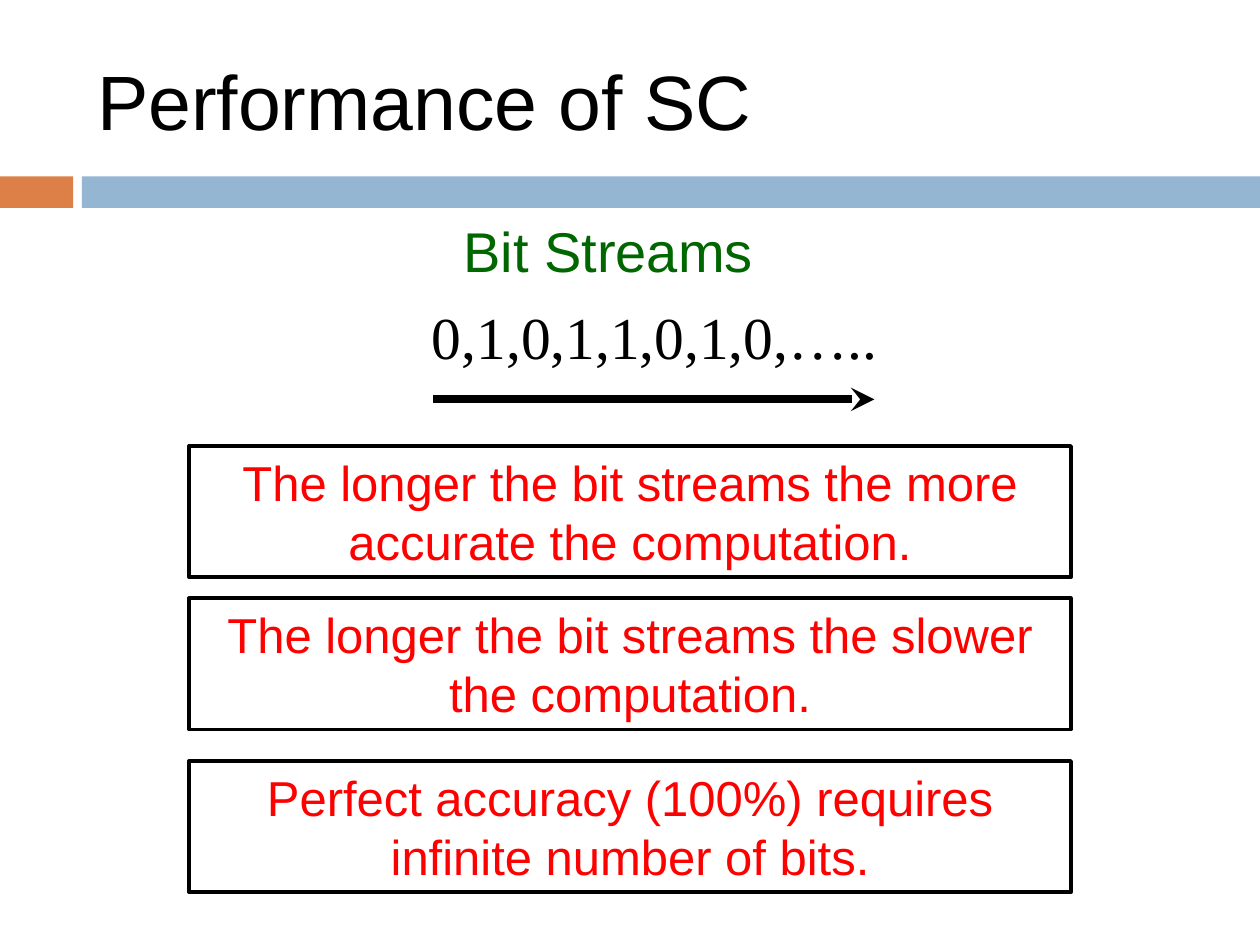
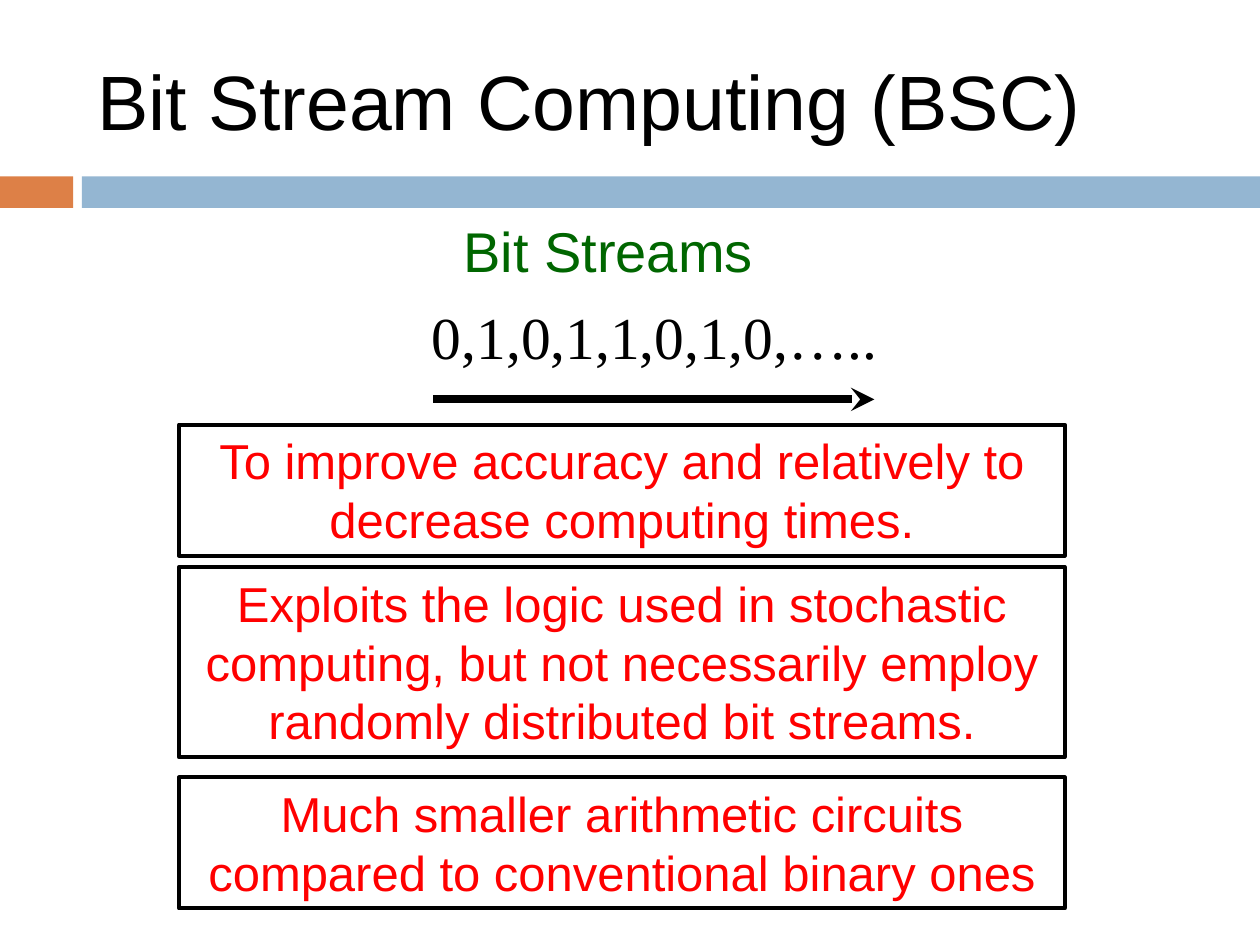
import dataclasses

import lxml.etree
import pptx
import pptx.dml.color
import pptx.enum.shapes
import pptx.enum.text
import pptx.oxml.ns
import pptx.util

Inches = pptx.util.Inches
Align = pptx.enum.text.PP_ALIGN
Anchor = pptx.enum.text.MSO_ANCHOR
AutoSize = pptx.enum.text.MSO_AUTO_SIZE


@dataclasses.dataclass(frozen=True)
class Theme:
    """Colours, fonts and sizes shared by the slides."""

    black: str = "000000"
    white: str = "FFFFFF"
    orange: str = "DD8047"
    blue: str = "94B6D2"
    green: str = "006600"
    red: str = "FF0000"
    sans: str = "Arial"
    serif: str = "Times New Roman"
    title_size: int = 44
    heading_size: int = 32
    bits_size: int = 34
    statement_size: int = 28
    box_line: float = 2.25
    arrow_line: float = 4.5


THEME = Theme()
TITLE_BOX = (0.67, 0.25, 8.92, 1.08)
BAND_BOX = (0, 1.4, 10, 0.25)
STREAM_BOX = (3.33, 1.67, 3.78, 1.5)

SLIDES = [
    ("Performance of SC", 1.5, 7, [
        (3.54, 1.04, "The longer the bit streams the more accurate the computation."),
        (4.75, 1.04, "The longer the bit streams the slower the computation."),
        (6.04, 1.04, "Perfect accuracy (100%) requires infinite number of bits."),
    ]),
    ("Bit Stream Computing (BSC)", 1.42, 7.03, [
        (3.37, 1.04, "To improve accuracy and relatively to decrease computing times."),
        (4.5, 1.51, "Exploits the logic used in stochastic computing, but not "
                    "necessarily employ randomly distributed bit streams."),
        (6.17, 1.04, "Much smaller arithmetic circuits compared to conventional binary ones"),
    ]),
]


def color(value):
    """Turn a hexadecimal string into a colour."""
    return pptx.dml.color.RGBColor.from_string(value)


def lengths(box):
    """Turn a box in inches into lengths."""
    return [Inches(value) for value in box]


def write(shape, text, size, ink=THEME.black, font=THEME.sans,
          align=Align.LEFT, anchor=Anchor.TOP, wrap=True, fit=AutoSize.NONE):
    """Write formatted text into a shape."""
    frame = shape.text_frame
    frame.word_wrap = wrap
    frame.auto_size = fit
    frame.vertical_anchor = anchor
    paragraph = frame.paragraphs[0]
    paragraph.alignment = align
    run = paragraph.add_run()
    run.text = text
    run.font.name = font
    run.font.size = pptx.util.Pt(size)
    run.font.color.rgb = color(ink)


def add_rectangle(shapes, box, fill, line=None):
    """Add a flat rectangle with an optional outline colour."""
    shape = shapes.add_shape(pptx.enum.shapes.MSO_SHAPE.RECTANGLE, *lengths(box))
    shape.shadow.inherit = False
    shape.fill.solid()
    shape.fill.fore_color.rgb = color(fill)
    if line:
        shape.line.color.rgb = color(line)
        shape.line.width = pptx.util.Pt(THEME.box_line)
    else:
        shape.line.fill.background()
    return shape


def add_arrow(shapes, left, top, width):
    """Add a horizontal arrow with a stealth head."""
    arrow = shapes.add_connector(
        pptx.enum.shapes.MSO_CONNECTOR.STRAIGHT,
        *lengths((left, top, left + width, top)))
    arrow.line.color.rgb = color(THEME.black)
    arrow.line.width = pptx.util.Pt(THEME.arrow_line)
    properties = arrow.line._get_or_add_ln()
    lxml.etree.SubElement(properties, pptx.oxml.ns.qn("a:tailEnd"), type="stealth")
    lxml.etree.SubElement(properties.getparent(), pptx.oxml.ns.qn("a:effectLst"))


def add_bands(shapes, box):
    """Add the orange block and the blue band under the title."""
    left, top, width, height = box
    block, offset = 0.58, 0.65
    add_rectangle(shapes, (left, top, block, height), THEME.orange)
    add_rectangle(shapes, (left + offset, top, width - offset, height), THEME.blue)


def place_title(title, text, box):
    """Move the title placeholder and write its text."""
    title.left, title.top, title.width, title.height = lengths(box)
    write(title, text, THEME.title_size, anchor=Anchor.MIDDLE)


def add_bit_stream(shapes, box):
    """Add the heading, the bits and the arrow below them."""
    left, top, width, height = box
    heading = shapes.add_textbox(*lengths((left + 0.25, top, 2.52, 0.64)))
    write(heading, "Bit Streams", THEME.heading_size, ink=THEME.green,
          wrap=False, fit=AutoSize.SHAPE_TO_FIT_TEXT)
    group = shapes.add_group_shape()
    add_arrow(group.shapes, left + 0.11, top + height, 3.5)
    bits = group.shapes.add_textbox(*lengths((left, top + 0.66, width, 0.67)))
    write(bits, "0,1,0,1,1,0,1,0,…..", THEME.bits_size, font=THEME.serif,
          wrap=False, fit=AutoSize.SHAPE_TO_FIT_TEXT)


def add_statement(shapes, text, box):
    """Add an outlined box holding one statement."""
    shape = add_rectangle(shapes, box, THEME.white, line=THEME.black)
    write(shape, text, THEME.statement_size, ink=THEME.red,
          align=Align.CENTER, fit=AutoSize.SHAPE_TO_FIT_TEXT)


def add_stream_slide(presentation, title, left, width, statements):
    """Add a slide with a bit stream and the statements about it."""
    slide = presentation.slides.add_slide(
        presentation.slide_layouts.get_by_name("Title Only"))
    place_title(slide.shapes.title, title, TITLE_BOX)
    add_bands(slide.shapes, BAND_BOX)
    for top, height, text in statements:
        add_statement(slide.shapes, text, (left, top, width, height))
    add_bit_stream(slide.shapes, STREAM_BOX)


def main():
    """Build and save the presentation."""
    presentation = pptx.Presentation()
    presentation.slide_width, presentation.slide_height = Inches(10), Inches(7.5)
    for content in SLIDES:
        add_stream_slide(presentation, *content)
    presentation.save("out.pptx")


if __name__ == "__main__":
    main()
